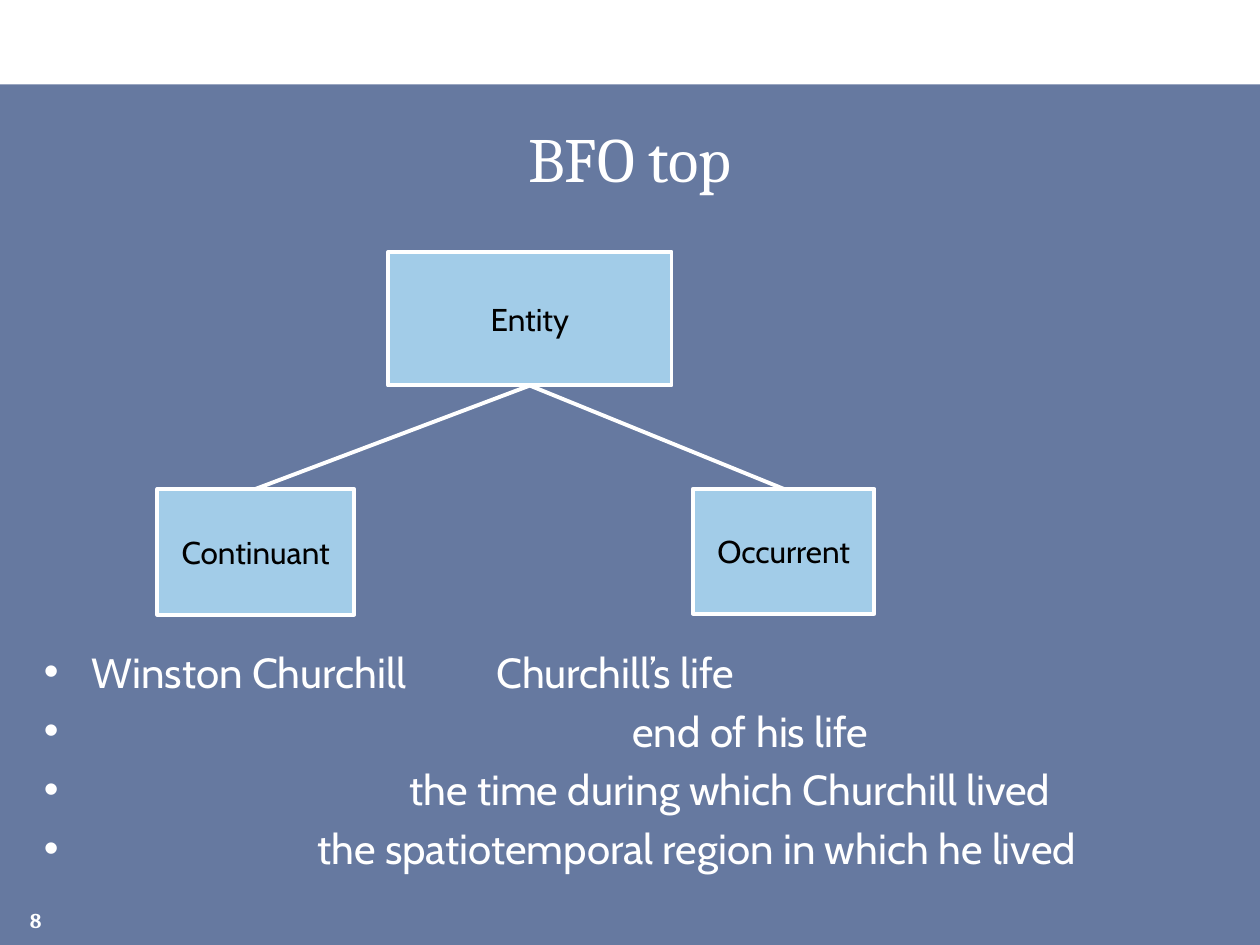
from lxml.etree import SubElement as Sub
from pptx import Presentation
from pptx.dml.color import RGBColor
from pptx.enum.shapes import MSO_CONNECTOR as Link, MSO_SHAPE as Shape
from pptx.enum.text import MSO_ANCHOR as Anchor, PP_ALIGN as Align
from pptx.oxml.ns import qn
from pptx.util import Inches, Pt

WHITE, BLACK, BLUE, SKY = "FFFFFF", "000000", "6679A0", "A2CCE8"
SERIF, SANS = "Cambria", "Cabin"


def color(code):
    return RGBColor.from_string(code)


def style(para, size, face, code, bold=False):
    for run in para.runs:
        font = run.font
        font.size, font.name, font.bold = Pt(size), face, bold
        font.color.rgb = color(code)


def add_rect(slide, place, fill, edge=None):
    rect = slide.shapes.add_shape(Shape.RECTANGLE, *map(Inches, place))
    rect.shadow.inherit = False
    rect.fill.solid()
    rect.fill.fore_color.rgb = color(fill)
    if edge:
        rect.line.color.rgb = color(edge)
        rect.line.width = Pt(2.25)
    else:
        rect.line.fill.background()
    return rect


def add_node(slide, text, place):
    node = add_rect(slide, place, SKY, WHITE)
    frame = node.text_frame
    frame.text = text
    frame.word_wrap = False
    frame.vertical_anchor = Anchor.MIDDLE
    para = frame.paragraphs[0]
    para.alignment = Align.CENTER
    style(para, 18, SANS, BLACK)
    return node


def add_edge(slide, top, low):
    edge = slide.shapes.add_connector(Link.STRAIGHT, 0, 0, 0, 0)
    edge.begin_connect(top, 2)
    edge.end_connect(low, 0)
    edge.line.color.rgb = color(WHITE)
    edge.line.width = Pt(2.25)
    Sub(edge._element.spPr, qn("a:effectLst"))


def add_text(slide, place, anchor, pad=None):
    frame = slide.shapes.add_textbox(*map(Inches, place)).text_frame
    frame.word_wrap = True
    frame.vertical_anchor = anchor
    if pad is not None:
        frame.margin_left = frame.margin_right = Inches(pad)
        frame.margin_top = frame.margin_bottom = Inches(pad)
    return frame


def add_label(slide, text, place, size, align, anchor, pad=None, bold=False):
    frame = add_text(slide, place, anchor, pad)
    frame.text = text
    para = frame.paragraphs[0]
    para.alignment = align
    style(para, size, SERIF, WHITE, bold)


def set_bullet(para, left, stop=None):
    props = para._p.get_or_add_pPr()
    props.set("marL", str(Inches(left)))
    props.set("indent", str(-Inches(left)))
    Sub(Sub(props, qn("a:buClr")), qn("a:srgbClr"), val=WHITE)
    Sub(props, qn("a:buFont"), typeface="Arial")
    Sub(props, qn("a:buChar"), char="•")
    if stop:
        tabs = Sub(props, qn("a:tabLst"))
        Sub(tabs, qn("a:tab"), pos=str(Inches(stop)), algn="l")


def add_list(slide, place, items):
    frame = add_text(slide, place, Anchor.TOP)
    for i, (text, left, stop) in enumerate(items):
        para = frame.add_paragraph() if i else frame.paragraphs[0]
        para.text = text
        if i:
            para.space_before = Pt(4.8)
        set_bullet(para, left, stop)
        style(para, 24, SANS, WHITE)


def main():
    deck = Presentation()
    deck.slide_width, deck.slide_height = Inches(10), Inches(7.5)
    slide = deck.slides.add_slide(deck.slide_layouts[6])

    add_rect(slide, (0, 0.67, 10, 6.83), BLUE)
    add_label(slide, "BFO top", (0.25, 0.83, 9.5, 0.83), 36,
              Align.CENTER, Anchor.MIDDLE)
    add_list(slide, (0.25, 5.08, 9.83, 2.17), [
        ("Winston Churchill\tChurchill’s life", 0.38, 3.59),
        ("end of his life", 4.67, None),
        ("the time during which Churchill lived", 2.9, None),
        ("the spatiotemporal region in which he lived", 2.17, None),
    ])
    add_label(slide, "8", (0, 7.08, 0.33, 0.32), 12,
              Align.RIGHT, Anchor.BOTTOM, 0, True)

    root = add_node(slide, "Entity", (3.08, 2, 2.25, 1.06))
    for text, place in (("Continuant", (1.25, 3.88, 1.56, 1)),
                        ("Occurrent", (5.5, 3.88, 1.44, 0.99))):
        add_edge(slide, root, add_node(slide, text, place))

    deck.save("out.pptx")


if __name__ == "__main__":
    main()
